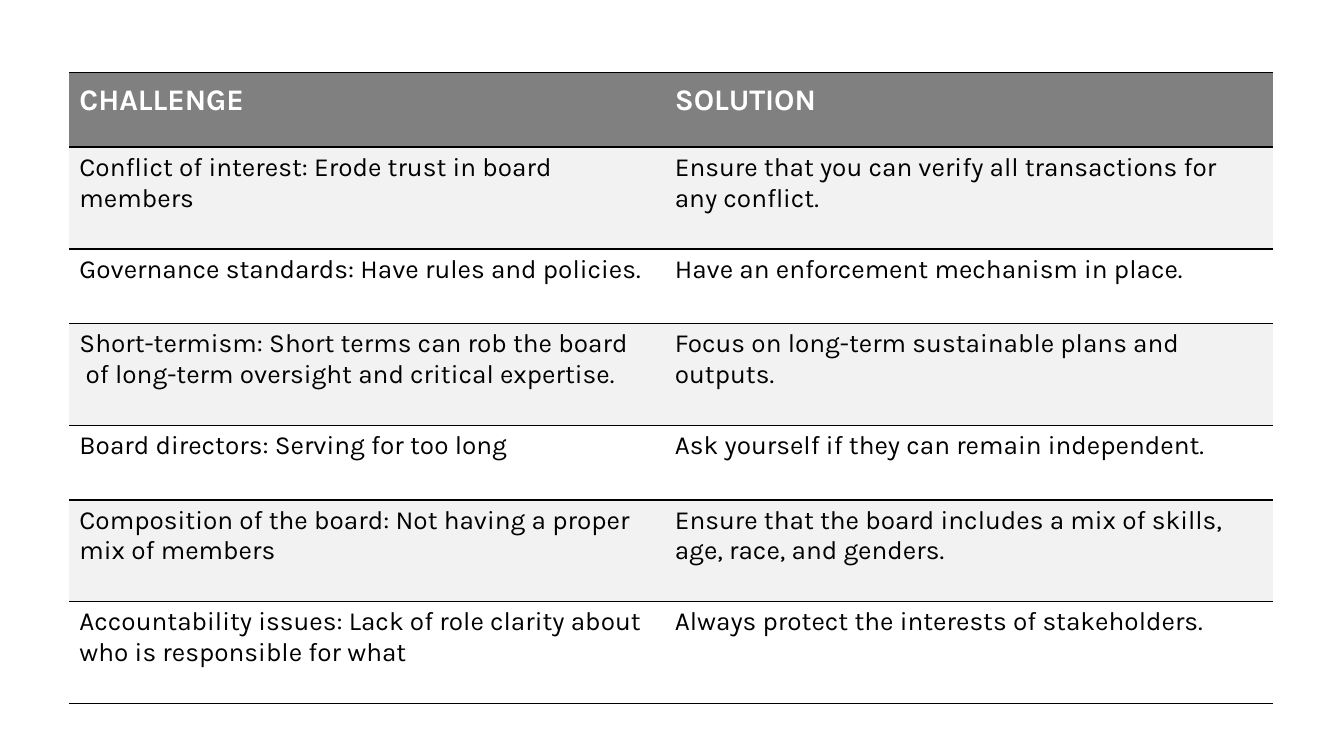
import pptx
import pptx.dml.color
import pptx.oxml.ns
import pptx.util
from lxml import etree

BLACK = pptx.dml.color.RGBColor(0x00, 0x00, 0x00)
WHITE = pptx.dml.color.RGBColor(0xFF, 0xFF, 0xFF)
HEADER_GRAY = pptx.dml.color.RGBColor(0x80, 0x80, 0x80)
BAND_GRAY = pptx.dml.color.RGBColor(0xF2, 0xF2, 0xF2)

ROWS = [
    ("CHALLENGE", "SOLUTION"),
    ("Conflict of interest: Erode trust in board members",
     "Ensure that you can verify all transactions for any conflict."),
    ("Governance standards: Have rules and policies.",
     "Have an enforcement mechanism in place."),
    ("Short-termism: Short terms can rob the board\v of long-term oversight and critical expertise.",
     "Focus on long-term sustainable plans and outputs."),
    ("Board directors: Serving for too long",
     "Ask yourself if they can remain independent."),
    ("Composition of the board: Not having a proper mix of members",
     "Ensure that the board includes a mix of skills, age, race, and genders."),
    ("Accountability issues: Lack of role clarity about who is responsible for what",
     "Always protect the interests of stakeholders."),
]
ONE_LINE, TWO_LINES = pptx.util.Pt(40), pptx.util.Pt(54.5)
ROW_HEIGHTS = [ONE_LINE, TWO_LINES] * 3 + [TWO_LINES]
COLUMN_WIDTHS = [pptx.util.Inches(4.43), pptx.util.Inches(4.53)]


def set_borders(cell):
    """Rule the cell above and below, and leave its sides open."""
    properties = cell._tc.get_or_add_tcPr()
    for side in ("L", "R", "T", "B"):
        line = etree.SubElement(properties, pptx.oxml.ns.qn(f"a:ln{side}"), w=str(pptx.util.Pt(1)))
        if side in "LR":
            etree.SubElement(line, pptx.oxml.ns.qn("a:noFill"))
        else:
            fill = etree.SubElement(line, pptx.oxml.ns.qn("a:solidFill"))
            etree.SubElement(fill, pptx.oxml.ns.qn("a:srgbClr"), val=str(BLACK))


# Widescreen slide, 16 to 9
presentation = pptx.Presentation()
presentation.slide_width = pptx.util.Inches(10)
presentation.slide_height = presentation.slide_width * 9 // 16
slide = presentation.slides.add_slide(presentation.slide_layouts[6])

# Table grid
table = slide.shapes.add_table(
    len(ROWS), len(COLUMN_WIDTHS), pptx.util.Pt(37), pptx.util.Inches(0.54),
    sum(COLUMN_WIDTHS), sum(ROW_HEIGHTS)).table
for column, width in zip(table.columns, COLUMN_WIDTHS):
    column.width = width
for row, height in zip(table.rows, ROW_HEIGHTS):
    row.height = height

# Header and banded rows
for row_index, texts in enumerate(ROWS):
    is_header = row_index == 0
    for column_index, text in enumerate(texts):
        cell = table.cell(row_index, column_index)
        cell.margin_left = cell.margin_right = pptx.util.Pt(5.6)
        cell.margin_top = cell.margin_bottom = pptx.util.Inches(0.04)
        set_borders(cell)
        if is_header or row_index % 2:
            cell.fill.solid()
            cell.fill.fore_color.rgb = HEADER_GRAY if is_header else BAND_GRAY
        else:
            cell.fill.background()

        cell.text = text
        paragraph = cell.text_frame.paragraphs[0]
        paragraph.line_spacing = 1.15 if is_header else 1.0
        paragraph.font.name = "Karla"
        paragraph.font.size = pptx.util.Pt(16 if is_header else 14)
        paragraph.font.bold = is_header
        paragraph.font.color.rgb = WHITE if is_header else BLACK

presentation.save("out.pptx")
